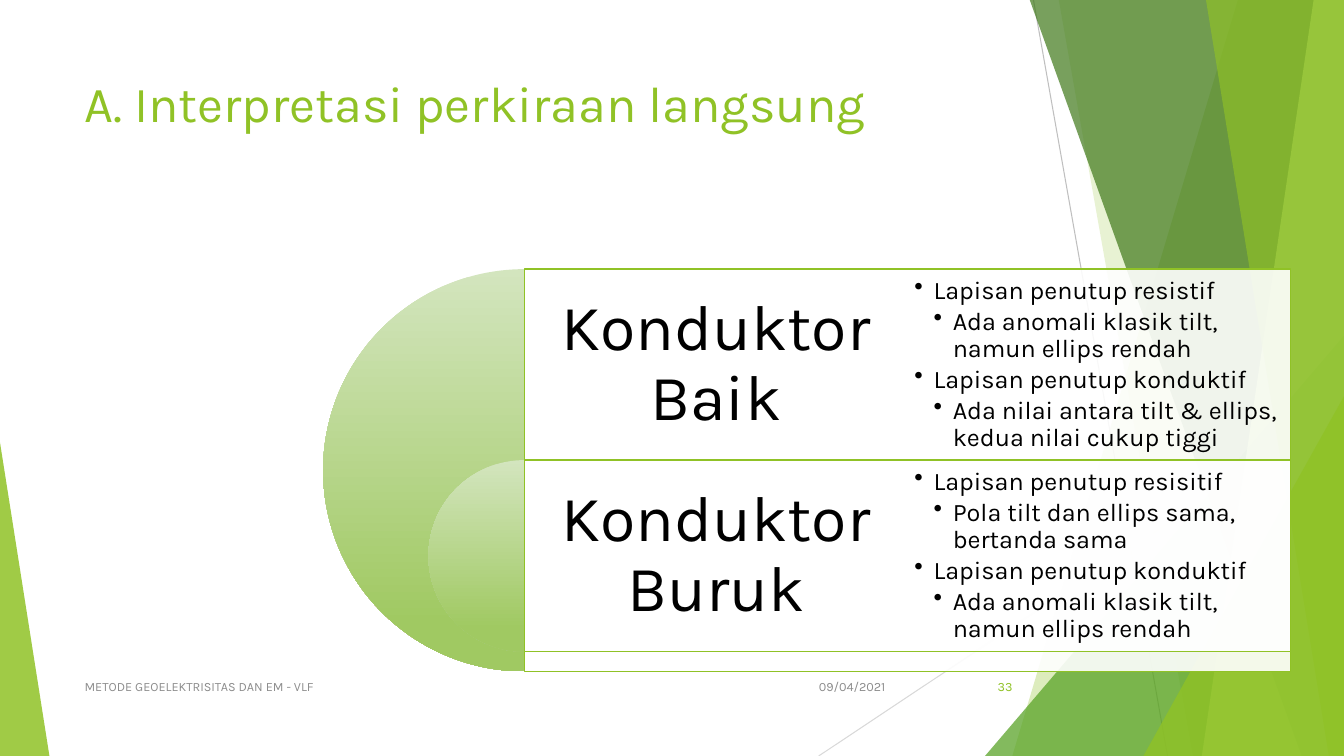
from dataclasses import dataclass

from lxml import etree
from pptx import Presentation
from pptx import util as u
from pptx.dml.color import RGBColor
from pptx.enum import shapes, text
from pptx.oxml.ns import qn

FONT = "Karla"
COLORS = {
    "green": "90C226", "leaf": "54A021", "forest": "3F7819", "lime": "C0E474",
    "pale": "D3E5BE", "soft": "A0C962", "white": "FFFFFF", "black": "000000",
    "gray": "8C8C8C", "line_dark": "BFBFBF", "line_light": "D9D9D9",
}
WIDTH, HEIGHT = 13.33, 7.5
TOP = -0.01


@dataclass
class Band:
    """Slanted band that reaches the right edge of the slide."""
    top_x: float
    bottom_x: float
    color: str
    opacity: int


@dataclass
class Corner:
    """Right triangle standing on the bottom edge of the slide."""
    left: float
    top: float
    width: float
    apex: int
    color: str
    opacity: int


@dataclass
class Ray:
    start: tuple[float, float]
    end: tuple[float, float]
    color: str


@dataclass
class Conductor:
    """One layer of the stacked diagram."""
    name: str
    size: float
    points: list[tuple[int, str]]


RAYS = [Ray((10.25, 0), (11.58, HEIGHT), "line_dark"),
        Ray((WIDTH, 4.03), (8.12, HEIGHT), "line_light")]

# Decoration from back to front
DECORATION = [
    Band(12.28, 10.04, "green", 30),
    Band(10.5, 11.83, "green", 20),
    Corner(9.77, 3.33, 3.56, 1, "leaf", 72),
    Band(10.21, 12.91, "forest", 70),
    Band(13.03, 11.92, "lime", 70),
    Band(11.96, 13.18, "green", 65),
    Corner(11.34, 3.93, 1.99, 1, "green", 80),
    Corner(0, 4.39, 0.49, 0, "green", 85),
]

CONDUCTORS = [
    Conductor("Konduktor Baik", 3.99, [
        (0, "Lapisan penutup resistif"),
        (1, "Ada anomali klasik tilt, namun ellips rendah"),
        (0, "Lapisan penutup konduktif"),
        (1, "Ada nilai antara tilt & ellips, kedua nilai cukup tiggi")]),
    Conductor("Konduktor Buruk", 1.9, [
        (0, "Lapisan penutup resisitif"),
        (1, "Pola tilt dan ellips sama, bertanda sama"),
        (0, "Lapisan penutup konduktif"),
        (1, "Ada anomali klasik tilt, namun ellips rendah")]),
]
PANEL_LEFT, PANEL_TOP, PANEL_WIDTH, ROW = 5.2, 2.67, 7.6, 1.895
COLUMN = PANEL_WIDTH / 2
INDENT = 0.19


def rgb(name: str) -> RGBColor:
    return RGBColor.from_string(COLORS[name])


def fill_solid(shape, color: str, opacity: int) -> None:
    shape.shadow.inherit = False
    shape.fill.solid()
    shape.fill.fore_color.rgb = rgb(color)
    color_element = shape._element.spPr.find(qn("a:solidFill"))[0]
    etree.SubElement(color_element, qn("a:alpha")).set("val", str(opacity * 1000))


def add_preset(slide, kind, left: float, top: float, width: float, height: float):
    return slide.shapes.add_shape(kind, u.Inches(left), u.Inches(top),
                                  u.Inches(width), u.Inches(height))


def add_ray(slide, ray: Ray) -> None:
    points = [u.Inches(value) for value in (*ray.start, *ray.end)]
    connector = slide.shapes.add_connector(shapes.MSO_CONNECTOR.STRAIGHT, *points)
    connector.line.color.rgb = rgb(ray.color)
    connector.line.width = u.Pt(0.75)
    etree.SubElement(connector._element.spPr, qn("a:effectLst"))


def add_band(slide, band: Band) -> None:
    builder = slide.shapes.build_freeform(u.Inches(band.top_x), u.Inches(TOP))
    corners = [(WIDTH, TOP), (WIDTH, HEIGHT), (band.bottom_x, HEIGHT)]
    builder.add_line_segments([(u.Inches(x), u.Inches(y)) for x, y in corners])
    shape = builder.convert_to_shape()
    fill_solid(shape, band.color, band.opacity)
    shape.line.fill.background()


def add_corner(slide, corner: Corner) -> None:
    shape = add_preset(slide, shapes.MSO_SHAPE.ISOSCELES_TRIANGLE, corner.left,
                       corner.top, corner.width, HEIGHT - corner.top)
    shape.adjustments[0] = corner.apex
    fill_solid(shape, corner.color, corner.opacity)
    shape.line.fill.background()


def add_text(slide, lines: list[tuple[int, str]], left: float, top: float,
             width: float, height: float, *, size: float, color: str = "black",
             align=text.PP_ALIGN.LEFT, anchor=text.MSO_ANCHOR.MIDDLE,
             inset: tuple[float, float] = (0.1, 0.05), spacing: float = 1.0,
             after: float = 0, bullets: bool = False) -> None:
    box = slide.shapes.add_textbox(u.Inches(left), u.Inches(top),
                                   u.Inches(width), u.Inches(height))
    frame = box.text_frame
    frame.word_wrap = True
    frame.vertical_anchor = anchor
    frame.margin_left = frame.margin_right = u.Inches(inset[0])
    frame.margin_top = frame.margin_bottom = u.Inches(inset[1])
    for index, (level, content) in enumerate(lines):
        paragraph = frame.add_paragraph() if index else frame.paragraphs[0]
        paragraph.alignment = align
        paragraph.line_spacing = spacing
        paragraph.space_after = u.Pt(after)
        paragraph.level = level
        if bullets:
            properties = paragraph._p.get_or_add_pPr()
            properties.set("marL", str(u.Inches(INDENT * (level + 1))))
            properties.set("indent", str(u.Inches(-INDENT)))
            etree.SubElement(properties, qn("a:buChar")).set("char", "•")
        run = paragraph.add_run()
        run.text = content
        run.font.name = FONT
        run.font.size = u.Pt(size)
        run.font.color.rgb = rgb(color)


def add_conductor(slide, conductor: Conductor, top: float) -> None:
    size = conductor.size
    # Half disc
    disc = add_preset(slide, shapes.MSO_SHAPE.PIE, PANEL_LEFT - size / 2, top, size, size)
    disc.adjustments[0], disc.adjustments[1] = 54, 162
    disc.shadow.inherit = False
    disc.line.fill.background()
    disc.fill.gradient()
    disc.fill.gradient_angle = 270
    for stop, (position, color) in zip(disc.fill.gradient_stops,
                                       [(0, "pale"), (0.88, "soft")]):
        stop.position = position
        stop.color.rgb = rgb(color)
    # Panel
    panel = add_preset(slide, shapes.MSO_SHAPE.RECTANGLE, PANEL_LEFT, top, PANEL_WIDTH, size)
    fill_solid(panel, "white", 90)
    panel.line.color.rgb = rgb("green")
    panel.line.width = u.Pt(1)
    # Name and points
    add_text(slide, [(0, conductor.name)], PANEL_LEFT, top, COLUMN, ROW, size=46,
             align=text.PP_ALIGN.CENTER, inset=(0.19, 0.19), spacing=0.9)
    add_text(slide, conductor.points, PANEL_LEFT + COLUMN, top, COLUMN, ROW, size=18,
             inset=(0.07, 0.07), spacing=0.9, after=2.7, bullets=True)


def main() -> None:
    presentation = Presentation()
    presentation.slide_width = u.Inches(WIDTH)
    presentation.slide_height = u.Inches(HEIGHT)
    slide = presentation.slides.add_slide(presentation.slide_layouts[6])

    # Background decoration
    for ray in RAYS:
        add_ray(slide, ray)
    for part in DECORATION:
        if isinstance(part, Band):
            add_band(slide, part)
        else:
            add_corner(slide, part)

    # Title
    add_text(slide, [(0, "A. Interpretasi perkiraan langsung")], 0.74, 0.67, 9.4, 1.44,
             size=36, color="green", anchor=text.MSO_ANCHOR.TOP)

    # Diagram
    for row, conductor in enumerate(CONDUCTORS):
        add_conductor(slide, conductor, PANEL_TOP + row * ROW)

    # Footer
    right = text.PP_ALIGN.RIGHT
    add_text(slide, [(0, "09/04/2021")], 7.88, 6.61, 1, 0.4, size=9, color="gray", align=right)
    add_text(slide, [(0, "METODE GEOELEKTRISITAS DAN EM - VLF")], 0.74, 6.61, 6.89, 0.4,
             size=9, color="gray")
    add_text(slide, [(0, "33")], 9.39, 6.61, 0.75, 0.4, size=9, color="green", align=right)

    presentation.save("out.pptx")


if __name__ == "__main__":
    main()
